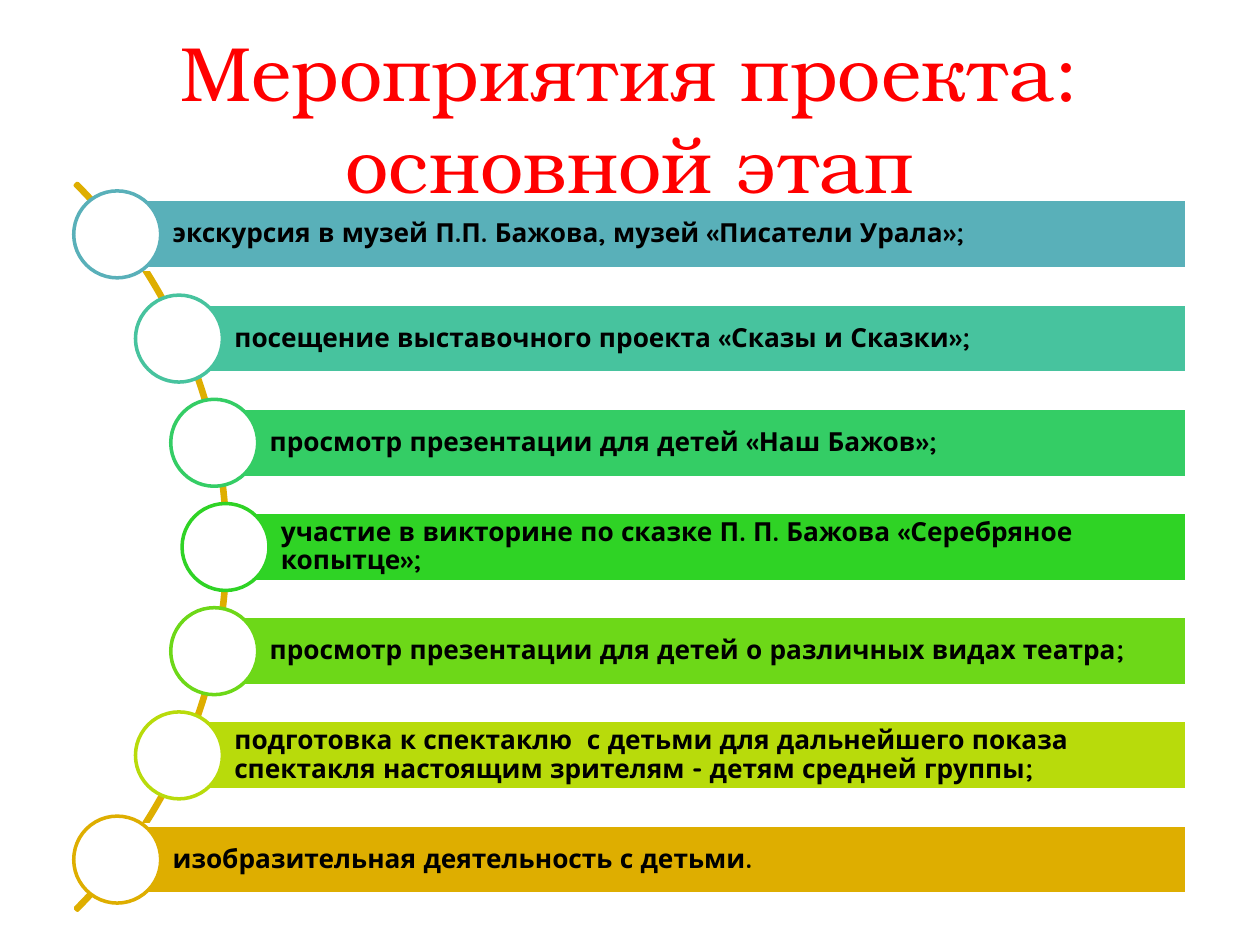
from pptx import Presentation
from pptx.dml.color import RGBColor
from pptx.enum.shapes import MSO_SHAPE
from pptx.enum.text import MSO_ANCHOR, MSO_AUTO_SIZE, PP_ALIGN
from pptx.util import Inches, Pt

COLORS = {
    "title": "FF0000", "text": "000000", "white": "FFFFFF", "arc": "DEAE00",
    "blue": "59B0B9", "teal": "47C39E", "emerald": "34CD65", "green": "2FD325",
    "lime": "6DD818", "yellow": "B8DB0B", "gold": "DEAE00",
}

# Bar left edge, colour, wording
ACTIVITIES = [
    (0.93, "blue", "экскурсия в музей П.П. Бажова, музей «Писатели Урала»;"),
    (1.42, "teal", "посещение выставочного проекта «Сказы и Сказки»;"),
    (1.70, "emerald", "просмотр презентации для детей «Наш Бажов»;"),
    (1.79, "green", "участие в викторине по сказке П. П. Бажова «Серебряное копытце»;"),
    (1.70, "lime", "просмотр презентации для детей о различных видах театра;"),
    (1.42, "yellow", "подготовка к спектаклю  с детьми для дальнейшего показа "
                     "спектакля настоящим зрителям - детям средней группы;"),
    (0.93, "gold", "изобразительная деятельность с детьми."),
]
BAR_RIGHT, BAR_HEIGHT, CIRCLE_SIZE = 9.42, 0.55, 0.69
FIRST_CENTER, ROW_STEP = 1.86, 0.827


def add_plain_shape(slide, kind, left, top, width, height, fill, line):
    shape = slide.shapes.add_shape(
        kind, Inches(left), Inches(top), Inches(width), Inches(height))
    shape.shadow.inherit = False
    if fill:
        shape.fill.solid()
        shape.fill.fore_color.rgb = RGBColor.from_string(COLORS[fill])
    else:
        shape.fill.background()
    shape.line.color.rgb = RGBColor.from_string(COLORS[line])
    shape.line.width = Pt(2)
    return shape


def add_text(paragraph, text, font_name, size, color, bold=False):
    run = paragraph.add_run()
    run.text = text
    run.font.name = font_name
    run.font.size = Pt(size)
    run.font.bold = bold
    run.font.color.rgb = RGBColor.from_string(COLORS[color])


presentation = Presentation()
presentation.slide_width = Inches(10)
presentation.slide_height = Inches(7.5)
slide = presentation.slides.add_slide(presentation.slide_layouts[5])

# Title
title = slide.shapes.title
title.left, title.top = Inches(0.5), Inches(0.3)
title.width, title.height = Inches(9), Inches(1.25)
title.text_frame.word_wrap = True
title.text_frame.auto_size = MSO_AUTO_SIZE.NONE
title.text_frame.vertical_anchor = MSO_ANCHOR.MIDDLE
title.text_frame.paragraphs[0].alignment = PP_ALIGN.CENTER
add_text(title.text_frame.paragraphs[0], "Мероприятия проекта: основной этап",
         "TeX Gyre Bonum", 44, "title")

# Arc behind the list, from 315 to 45 degrees
arc = add_plain_shape(slide, MSO_SHAPE.BLOCK_ARC, -6.35, 0.26, 8.16, 8.16, None, "arc")
for index, value in enumerate((189, 27, 0.003)):
    arc.adjustments[index] = value

# Bars, each with a circle centred on its left edge
for row, (left, color, wording) in enumerate(ACTIVITIES):
    center = FIRST_CENTER + row * ROW_STEP
    bar = add_plain_shape(slide, MSO_SHAPE.RECTANGLE, left, center - BAR_HEIGHT / 2,
                          BAR_RIGHT - left, BAR_HEIGHT, color, "white")
    frame = bar.text_frame
    frame.word_wrap = True
    frame.vertical_anchor = MSO_ANCHOR.MIDDLE
    frame.margin_left = Inches(0.44)
    frame.margin_top = frame.margin_right = frame.margin_bottom = Inches(0.04)
    paragraph = frame.paragraphs[0]
    paragraph.alignment = PP_ALIGN.LEFT
    paragraph.line_spacing = 0.9
    add_text(paragraph, wording, "Quicksand", 15, "text", bold=True)

    add_plain_shape(slide, MSO_SHAPE.OVAL, left - CIRCLE_SIZE / 2, center - CIRCLE_SIZE / 2,
                    CIRCLE_SIZE, CIRCLE_SIZE, "white", color)

presentation.save("out.pptx")
